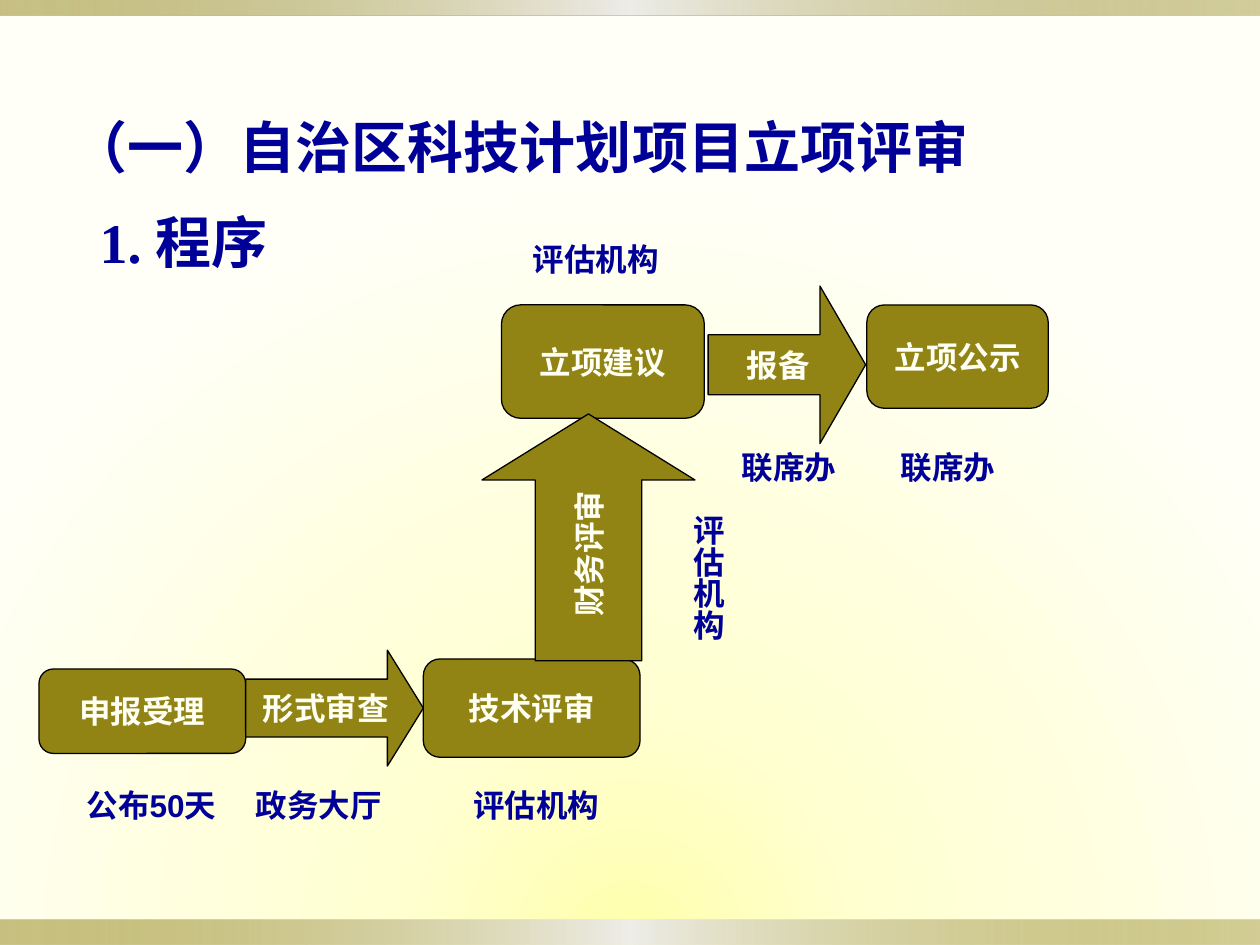
from lxml.etree import SubElement
from pptx import Presentation
from pptx.dml.color import RGBColor
from pptx.enum.shapes import MSO_SHAPE
from pptx.enum.text import MSO_ANCHOR, MSO_AUTO_SIZE, PP_ALIGN
from pptx.oxml.ns import qn
from pptx.util import Inches, Pt

OLIVE, NAVY, CREAM = "918415", "000099", "FFFFF4"

STEPS = [
    ("申报受理", 0.31, 5.31, 1.64, 0.67),
    ("技术评审", 3.36, 5.23, 1.72, 0.78),
    ("立项建议", 3.98, 2.42, 1.61, 0.9),
    ("立项公示", 6.88, 2.42, 1.44, 0.82),
]
TRANSITIONS = [
    ("形式审查", 1.95, 5.16, 1.41, 0.92, (0.5, 0.31), 0),
    ("财务评审", 3.69, 3.42, 1.96, 1.69, (0.5, 0.31), 270),
    ("报备", 5.62, 2.27, 1.25, 1.25, (0.38, 0.29), 0),
]
OFFICES = [
    ("公布50天", 0.59, 6.19, 1.26),
    ("政务大厅", 1.93, 6.19, 1.34),
    ("评估机构", 3.66, 6.19, 1.34),
    ("联席办", 5.79, 3.51, 1.1),
    ("联席办", 7.05, 3.51, 1.42),
    ("评估机构", 4.13, 1.86, 1.34),
]


def rgb(value):
    return RGBColor.from_string(value)


def write(paragraph, text, size=18, font="Arial", color=NAVY,
          align=PP_ALIGN.LEFT, before=0):
    paragraph.alignment = align
    paragraph.space_before = Pt(before)
    run = paragraph.add_run()
    run.text = text
    run.font.size = Pt(size)
    run.font.name = font
    run.font.bold = True
    run.font.color.rgb = rgb(color)


def set_gradient(fill, owner, stops, center=None):
    fill.gradient()
    gradient = owner.find(".//" + qn("a:gradFill"))
    for child in list(gradient):
        gradient.remove(child)
    stop_list = SubElement(gradient, qn("a:gsLst"))
    for position, color, opacity in stops:
        stop = SubElement(stop_list, qn("a:gs"), pos=str(position * 1000))
        shade = SubElement(stop, qn("a:srgbClr"), val=color)
        if opacity < 100:
            SubElement(shade, qn("a:alpha"), val=str(opacity * 1000))
    if center:
        route = SubElement(gradient, qn("a:path"), path="circle")
        sides = {side: str(share * 1000) for side, share in zip("ltrb", center)}
        SubElement(route, qn("a:fillToRect"), **sides)
    else:
        SubElement(gradient, qn("a:lin"), ang="0", scaled="1")


def add_band(slide, top, height):
    band = slide.shapes.add_shape(
        MSO_SHAPE.RECTANGLE, 0, Inches(top), Inches(10), Inches(height))
    band.shadow.inherit = False
    band.line.fill.background()
    set_gradient(band.fill, band._element,
                 [(0, OLIVE, 50), (50, "EEEDE8", 100), (100, OLIVE, 40)])


def add_heading(slide):
    heading = slide.shapes.title
    heading.left, heading.top = Inches(0.47), Inches(0.84)
    heading.width, heading.height = Inches(8.59), Inches(1.45)
    frame = heading.text_frame
    frame.auto_size = MSO_AUTO_SIZE.NONE
    frame.vertical_anchor = MSO_ANCHOR.TOP
    style = dict(size=32, font="Times New Roman", before=16)
    write(frame.paragraphs[0], "（一）自治区科技计划项目立项评审", **style)
    section = frame.add_paragraph()
    write(section, "1. 程序", **style)
    section._p.get_or_add_pPr().set("marL", str(Inches(0.22)))


def add_block(slide, preset, text, left, top, width, height, adjustments,
              rotation=0):
    block = slide.shapes.add_shape(
        preset, Inches(left), Inches(top), Inches(width), Inches(height))
    for index, value in enumerate(adjustments):
        block.adjustments[index] = value
    block.rotation = rotation
    block.shadow.inherit = False
    block.fill.solid()
    block.fill.fore_color.rgb = rgb(OLIVE)
    block.line.color.rgb = rgb("000000")
    block.line.width = Pt(0.75)
    frame = block.text_frame
    frame.word_wrap = False
    frame.vertical_anchor = MSO_ANCHOR.MIDDLE
    write(frame.paragraphs[0], text, color=CREAM, align=PP_ALIGN.CENTER)


def add_office(slide, text, left, top, width, height=0.4, vertical=False):
    office = slide.shapes.add_textbox(
        Inches(left), Inches(top), Inches(width), Inches(height))
    frame = office.text_frame
    frame.word_wrap = True
    frame.auto_size = MSO_AUTO_SIZE.SHAPE_TO_FIT_TEXT
    if vertical:
        frame._txBody.bodyPr.set("vert", "eaVert")
    write(frame.paragraphs[0], text)


def main():
    presentation = Presentation()
    presentation.slide_width = Inches(10)
    presentation.slide_height = Inches(7.5)
    slide = presentation.slides.add_slide(presentation.slide_layouts[5])
    set_gradient(slide.background.fill, slide._element,
                 [(0, "FFFFAC", 100), (31, "FFFFD2", 100), (100, "FFFFF7", 100)],
                 center=(50, 150, 50, 0))
    add_band(slide, 7.3, 0.2)
    add_band(slide, 0, 0.12)
    add_heading(slide)
    for step in STEPS:
        add_block(slide, MSO_SHAPE.ROUNDED_RECTANGLE, *step, adjustments=(0.17,))
    for transition in TRANSITIONS:
        add_block(slide, MSO_SHAPE.RIGHT_ARROW, *transition)
    for office in OFFICES:
        add_office(slide, *office)
    add_office(slide, "评估机构", 5.31, 3.99, 0.51, 1.34, vertical=True)
    presentation.save("out.pptx")


if __name__ == "__main__":
    main()
